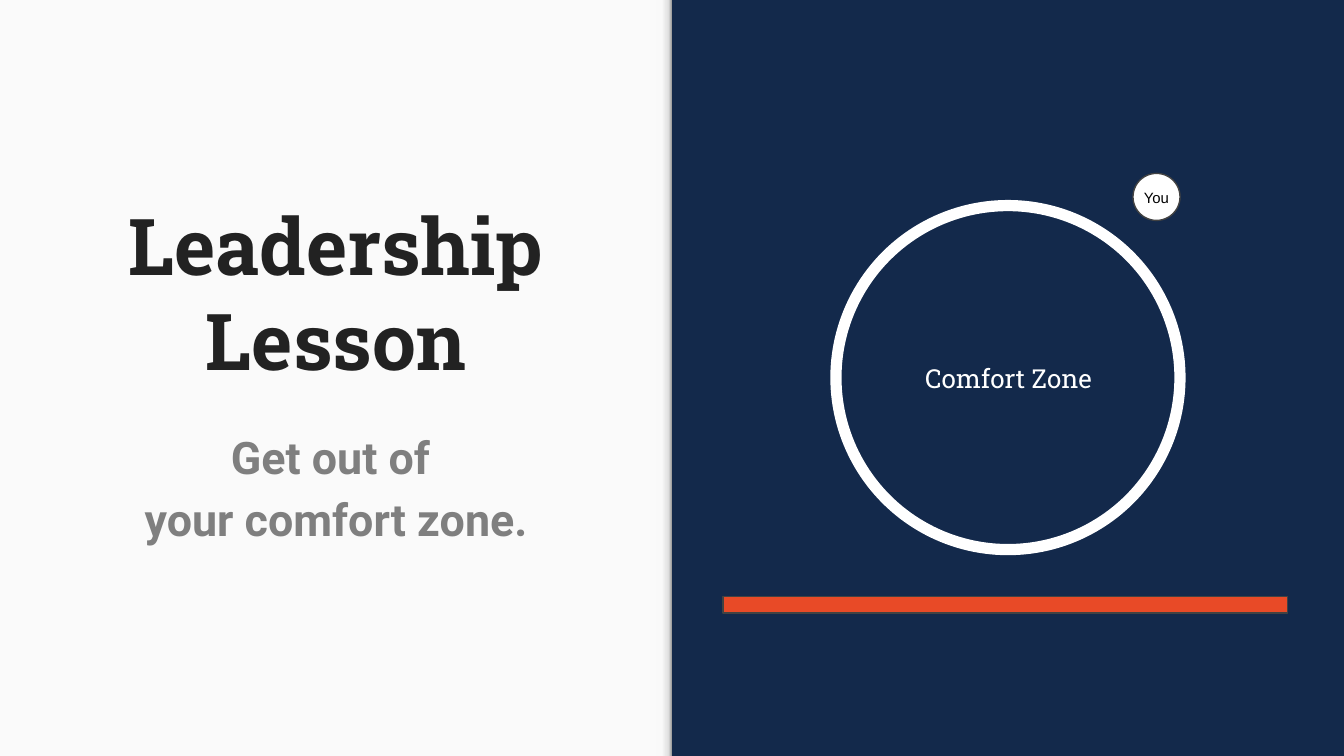
from lxml import etree
from pptx import Presentation
from pptx.dml.color import RGBColor
from pptx.enum.shapes import MSO_SHAPE
from pptx.enum.text import MSO_ANCHOR, PP_ALIGN
from pptx.oxml.ns import qn
from pptx.util import Inches, Pt

RECT, OVAL = MSO_SHAPE.RECTANGLE, MSO_SHAPE.OVAL
TOP, MID, LOW = MSO_ANCHOR.TOP, MSO_ANCHOR.MIDDLE, MSO_ANCHOR.BOTTOM
CENTER = PP_ALIGN.CENTER
WIDE = 10
HIGH = WIDE * 9 / 16
NAVY, WHITE, PAPER, ORANGE, GRAY = "13294B", "FFFFFF", "FAFAFA", "E84A27", "424242"
SHADE = [(0, "F9F9F9"), (36, "F9F9F9"), (80, "DEDEDE"), (100, "999999")]


def color(code):
    return RGBColor.from_string(code)


def add_shape(slide, kind, x, y, w, h, fill=None, line=None, width=0.75):
    shape = slide.shapes.add_shape(kind, Inches(x), Inches(y), Inches(w), Inches(h))
    shape.shadow.inherit = False
    if fill:
        shape.fill.solid()
        shape.fill.fore_color.rgb = color(fill)
    else:
        shape.fill.background()
    if line:
        shape.line.color.rgb = color(line)
        shape.line.width = Pt(width)
    else:
        shape.line.fill.background()
    return shape


def add_text(slide, x, y, w, h, text, font, size, ink, bold=False, anchor=MID, space=1.0):
    box = slide.shapes.add_textbox(Inches(x), Inches(y), Inches(w), Inches(h))
    frame = box.text_frame
    frame.word_wrap = True
    frame.vertical_anchor = anchor
    frame.margin_left = frame.margin_right = Inches(0.1)
    frame.margin_top = frame.margin_bottom = Inches(0.1)
    frame.text = text
    para = frame.paragraphs[0]
    para.alignment = CENTER
    para.line_spacing = space
    para.font.name = font
    para.font.size = Pt(size)
    para.font.bold = bold
    para.font.color.rgb = color(ink)


def add_shade(slide, x, y, w, h):
    fill = add_shape(slide, RECT, x, y, w, h).fill
    fill.gradient()
    fill.gradient_angle = 0
    # Replace the default stops
    stops = fill._xPr.find(qn("a:gradFill")).find(qn("a:gsLst"))
    for stop in list(stops):
        stops.remove(stop)
    for pos, code in SHADE:
        stop = etree.SubElement(stops, qn("a:gs"), pos=str(pos * 1000))
        etree.SubElement(stop, qn("a:srgbClr"), val=code)


def add_lesson(slide, x, y, w, h):
    # Light panel with a shaded right edge
    add_shape(slide, RECT, x, y, w, h, PAPER)
    add_shade(slide, x + w - 0.12, y, 0.12, h)
    # Title and subtitle
    add_text(slide, x + 0.29, y + 1.35, w - 0.58, 1.62, "Leadership Lesson",
             "Roboto Slab", 42, "222222", True, LOW)
    add_text(slide, x + 0.29, y + 3.04, w - 0.58, 2.19,
             "Get out of \vyour comfort zone.", "Roboto", 24, "7F7F7F", True, TOP, 1.15)


def add_zone(slide, x, y, w, h):
    # Base bar
    add_shape(slide, RECT, x + 0.38, y + 4.44, 4.2, 0.12, ORANGE, GRAY)
    # Comfort zone ring
    ring = 2.56
    add_shape(slide, OVAL, x + (w - ring) / 2, y + 1.53, ring, ring, None, WHITE, 6)
    add_text(slide, x + 1.53, y + 2.5, 1.95, 0.63, "Comfort Zone",
             "Roboto Slab", 14, WHITE)
    # You, outside the ring
    add_shape(slide, OVAL, x + 3.43, y + 1.29, 0.35, 0.35, WHITE, GRAY)
    add_text(slide, x + 3.33, y + 1.36, 0.55, 0.22, "You", "Arial", 8, "000000")


def main():
    deck = Presentation()
    deck.slide_width, deck.slide_height = Inches(WIDE), Inches(HIGH)
    slide = deck.slides.add_slide(deck.slide_layouts[6])
    slide.background.fill.solid()
    slide.background.fill.fore_color.rgb = color(NAVY)
    half = WIDE / 2
    add_lesson(slide, 0, 0, half, HIGH)
    add_zone(slide, half, 0, half, HIGH)
    deck.save("out.pptx")


if __name__ == "__main__":
    main()
